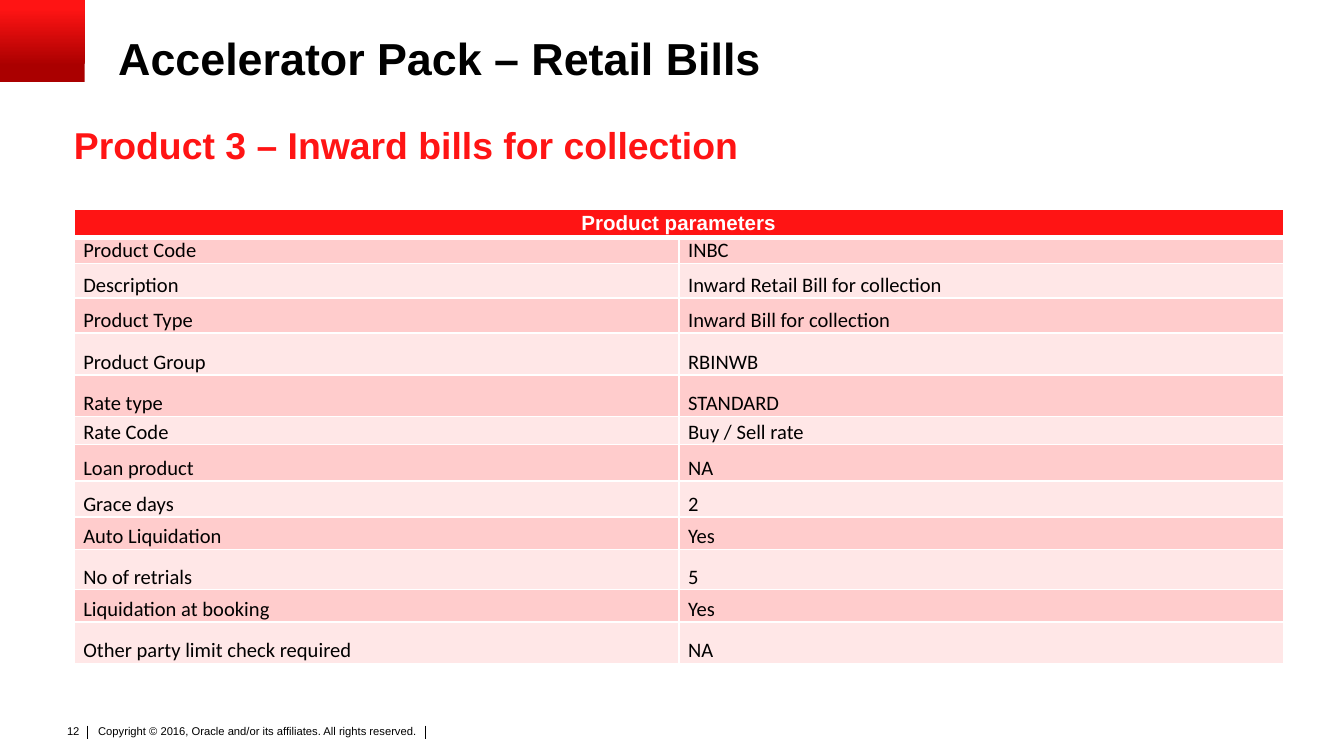
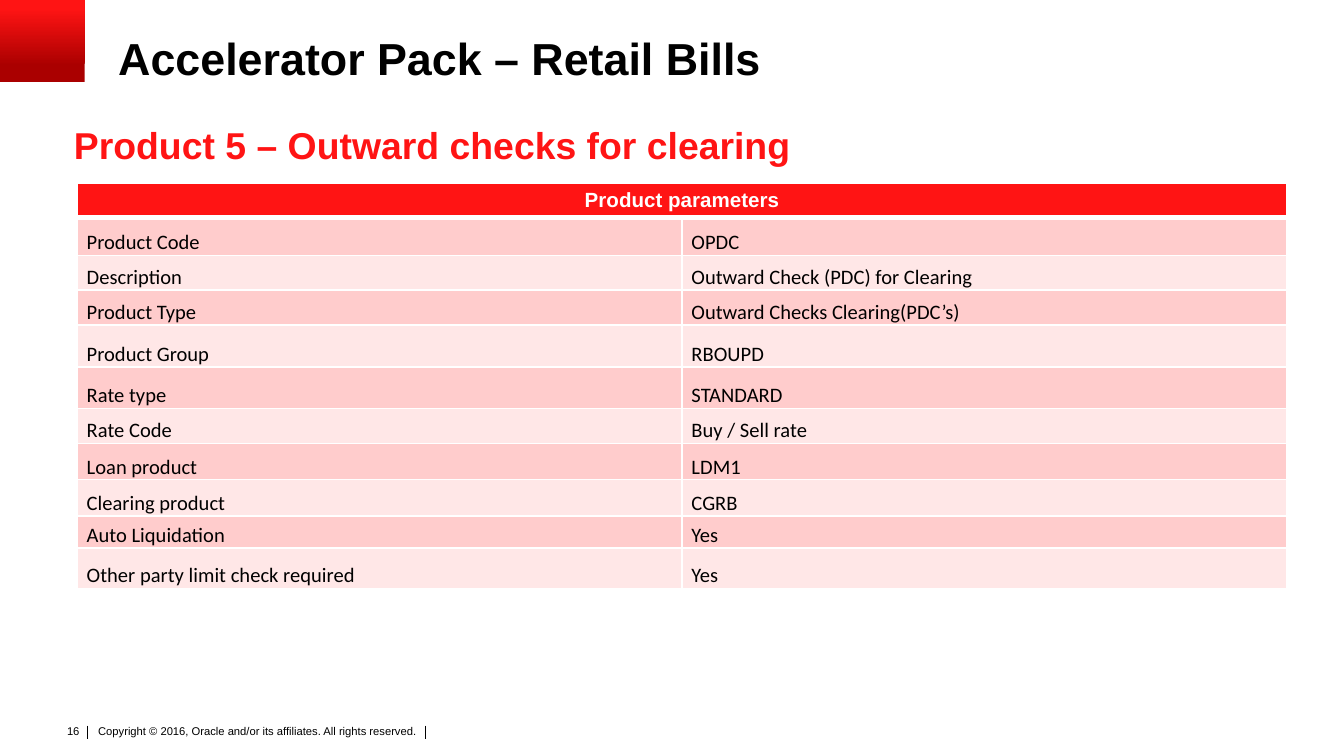
from dataclasses import dataclass

from lxml import etree
from pptx import Presentation
from pptx.dml.color import RGBColor
from pptx.enum.shapes import MSO_CONNECTOR, MSO_SHAPE
from pptx.enum.text import MSO_ANCHOR, MSO_AUTO_SIZE, PP_ALIGN
from pptx.oxml.ns import qn
from pptx.util import Inches, Pt

STRAIGHT = MSO_CONNECTOR.STRAIGHT
RECTANGLE = MSO_SHAPE.RECTANGLE
MIDDLE, BOTTOM = MSO_ANCHOR.MIDDLE, MSO_ANCHOR.BOTTOM
GROW = MSO_AUTO_SIZE.SHAPE_TO_FIT_TEXT
CENTER, RIGHT = PP_ALIGN.CENTER, PP_ALIGN.RIGHT

BLACK = RGBColor(0x00, 0x00, 0x00)
WHITE = RGBColor(0xFF, 0xFF, 0xFF)
RED = RGBColor(0xFF, 0x14, 0x14)
DARK_RED = RGBColor(0xAA, 0x00, 0x00)
BANDS = (RGBColor(0xFF, 0xCC, 0xCC), RGBColor(0xFF, 0xE7, 0xE7))

TITLE_FONT = {"name": "Arial", "size": Pt(24), "bold": True, "color": BLACK}
SUBTITLE_FONT = {"name": "Arial", "size": Pt(20), "bold": True, "color": RED}
FOOTER_FONT = {"name": "Arial", "size": Pt(6), "bold": False, "color": BLACK}
HEADER_FONT = {"name": "Arial", "size": Pt(11), "bold": True, "color": WHITE}
CELL_FONT = {"name": "Calibri", "size": Pt(11), "bold": False, "color": BLACK}

TITLE = "Accelerator Pack – Retail Bills"
TABLE_HEADER = "Product parameters"
COPYRIGHT = "Copyright © 2016, Oracle and/or its affiliates. All rights reserved."

# Each table row: relative height, parameter, value
PRODUCTS = [
    {
        "page": "12",
        "subtitle": "Product 3 – Inward bills for collection",
        "table_area": (5.5, 27.73, 90, 60.09),
        "header_height": 21,
        "parameters": [
            (19, "Product Code", "INBC"),
            (26, "Description", "Inward Retail Bill for collection"),
            (26, "Product Type", "Inward Bill for collection"),
            (31, "Product Group", "RBINWB"),
            (31, "Rate type", "STANDARD"),
            (21, "Rate Code", "Buy / Sell rate"),
            (27, "Loan product", "NA"),
            (27, "Grace days", "2"),
            (24, "Auto Liquidation", "Yes"),
            (30, "No of retrials", "5"),
            (24, "Liquidation at booking", "Yes"),
            (31, "Other party limit check required", "NA"),
        ],
    },
    {
        "page": "16",
        "subtitle": "Product 5 – Outward checks for clearing",
        "table_area": (5.75, 24.18, 90, 53.7),
        "header_height": 26,
        "parameters": [
            (28, "Product Code", "OPDC"),
            (26, "Description", "Outward Check (PDC) for Clearing"),
            (26, "Product Type", "Outward Checks Clearing(PDC’s)"),
            (31, "Product Group", "RBOUPD"),
            (31, "Rate type", "STANDARD"),
            (26, "Rate Code", "Buy / Sell rate"),
            (27, "Loan product", "LDM1"),
            (27, "Clearing product", "CGRB"),
            (24, "Auto Liquidation", "Yes"),
            (30, "Other party limit check required", "Yes"),
        ],
    },
]


@dataclass
class Box:
    left: int
    top: int
    width: int
    height: int

    def inner(self, x, y, w, h):
        """Return an inner box given in percent of this one."""
        return Box(
            int(self.left + self.width * x / 100),
            int(self.top + self.height * y / 100),
            int(self.width * w / 100),
            int(self.height * h / 100),
        )

    def frame(self):
        return self.left, self.top, self.width, self.height


def write(frame, text, font_format, align=None):
    paragraph = frame.paragraphs[0]
    paragraph.alignment = align
    run = paragraph.add_run()
    run.text = text
    for key, value in font_format.items():
        if key == "color":
            run.font.color.rgb = value
        else:
            setattr(run.font, key, value)
    return paragraph


def set_margins(holder, across, down):
    margins = {"left": across, "right": across, "top": down, "bottom": down}
    for side, inches in margins.items():
        setattr(holder, f"margin_{side}", Inches(inches))


def add_text(slide, box, text, font_format, margins=(0, 0), align=None):
    frame = slide.shapes.add_textbox(*box.frame()).text_frame
    frame.word_wrap = True
    set_margins(frame, *margins)
    write(frame, text, font_format, align)
    return frame


def add_corner(slide, box):
    corner = slide.shapes.add_shape(RECTANGLE, *box.frame())
    corner.shadow.inherit = False
    corner.line.fill.background()
    corner.fill.gradient()
    corner.fill.gradient_angle = 90
    stops = ((0.2, DARK_RED), (0.9, RED))
    for stop, (position, color) in zip(corner.fill.gradient_stops, stops):
        stop.position = position
        stop.color.rgb = color


def add_headings(slide, box, subtitle):
    title = add_text(slide, box.inner(8.8, 4.8, 90, 7.82), TITLE, TITLE_FONT)
    title.paragraphs[0].line_spacing = 0.9
    add_text(slide, box.inner(5.5, 16.18, 90, 5.87), subtitle, SUBTITLE_FONT)


def add_footer(slide, box, page):
    add_text(slide, box.inner(9.87, 11, 90.13, 89), COPYRIGHT, FOOTER_FONT, (0.04, 0.02))
    number = add_text(slide, box.inner(0, 0, 9.87, 74), page, FOOTER_FONT, (0.1, 0.05), RIGHT)
    number.word_wrap = False
    number.auto_size = GROW
    # Rules on both sides of the copyright line
    for x in (8.55, 91.3):
        rule = box.inner(x, 22, 0, 37)
        line = slide.shapes.add_connector(
            STRAIGHT, rule.left, rule.top, rule.left, rule.top + rule.height)
        line.line.color.rgb = BLACK
        line.line.width = Pt(0.5)
        etree.SubElement(line._element.spPr, qn("a:effectLst"))


def set_borders(cell, widths):
    properties = cell._tc.get_or_add_tcPr()
    for position, (side, width) in enumerate(widths.items()):
        border = etree.Element(qn(f"a:ln{side}"), w=str(Pt(width)))
        fill = etree.SubElement(border, qn("a:solidFill"))
        etree.SubElement(fill, qn("a:srgbClr"), val=str(WHITE))
        properties.insert(position, border)


def style_cell(cell, fill, anchor, top=1, bottom=1):
    set_margins(cell, 0.07, 0)
    cell.vertical_anchor = anchor
    cell.fill.solid()
    cell.fill.fore_color.rgb = fill
    set_borders(cell, {"L": 1, "R": 1, "T": top, "B": bottom})


def add_parameters(slide, box, header_height, parameters):
    heights = [header_height] + [height for height, _, _ in parameters]
    table = slide.shapes.add_table(len(heights), 2, *box.frame()).table
    table.horz_banding = False
    for row, height in zip(table.rows, heights):
        row.height = int(box.height * height / sum(heights))

    # Header across both columns
    header = table.cell(0, 0)
    header.merge(table.cell(0, 1))
    for cell in table.rows[0].cells:
        style_cell(cell, RED, MIDDLE, bottom=3)
    write(header.text_frame, TABLE_HEADER, HEADER_FONT, CENTER).space_after = Pt(10)

    # Banded parameter rows
    for index, (_, *texts) in enumerate(parameters):
        for column, text in enumerate(texts):
            cell = table.cell(index + 1, column)
            style_cell(cell, BANDS[index % 2], BOTTOM, top=1 if index else 3)
            write(cell.text_frame, text, CELL_FONT)


def add_product_slide(deck, page_box, product):
    slide = deck.slides.add_slide(deck.slide_layouts[6])
    add_footer(slide, page_box.inner(3.9, 94.93, 30.4, 4.8), product["page"])
    add_corner(slide, page_box.inner(0, 0, 6.3, 10.84))
    add_headings(slide, page_box, product["subtitle"])
    add_parameters(slide, page_box.inner(*product["table_area"]),
                   product["header_height"], product["parameters"])


def main():
    deck = Presentation()
    deck.slide_width = Inches(10)
    deck.slide_height = deck.slide_width * 9 // 16
    page_box = Box(0, 0, deck.slide_width, deck.slide_height)
    for product in PRODUCTS:
        add_product_slide(deck, page_box, product)
    deck.save("out.pptx")


if __name__ == "__main__":
    main()
